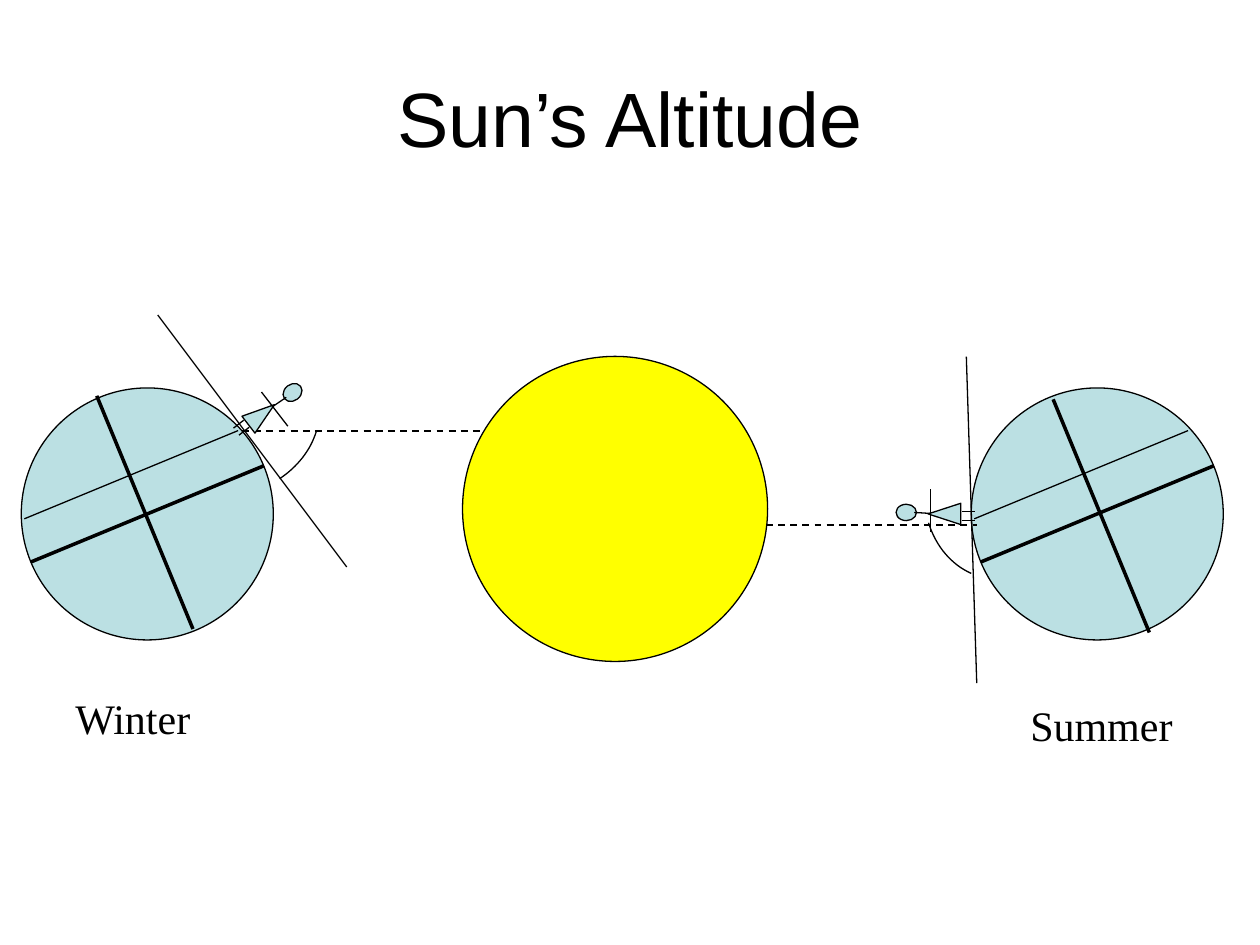
import math

import pptx
import pptx.dml.color
import pptx.enum.dml
import pptx.enum.shapes
import pptx.enum.text
import pptx.oxml
import pptx.oxml.ns
import pptx.util
from pptx.util import Cm

BLACK = pptx.dml.color.RGBColor(0x00, 0x00, 0x00)
SUN_YELLOW = pptx.dml.color.RGBColor(0xFF, 0xFF, 0x00)
PALE_BLUE = pptx.dml.color.RGBColor(0xBB, 0xE0, 0xE3)
OVAL = pptx.enum.shapes.MSO_SHAPE.OVAL
TRIANGLE = pptx.enum.shapes.MSO_SHAPE.ISOSCELES_TRIANGLE


def style_line(line, width=0.75):
    line.color.rgb = BLACK
    line.width = pptx.util.Pt(width)


def add_solid(shapes, kind, center, width, height, color, rotation=0):
    """Add a filled, outlined preset shape around its center."""
    x, y = center
    shape = shapes.add_shape(kind, Cm(x - width / 2), Cm(y - height / 2), Cm(width), Cm(height))
    shape.rotation = rotation
    shape.shadow.inherit = False
    shape.fill.solid()
    shape.fill.fore_color.rgb = color
    style_line(shape.line)


def add_line(shapes, start, end, width=0.75, dashed=False):
    points = [Cm(value) for value in (*start, *end)]
    connector = shapes.add_connector(pptx.enum.shapes.MSO_CONNECTOR.STRAIGHT, *points)
    style_line(connector.line, width)
    if dashed:
        connector.line.dash_style = pptx.enum.dml.MSO_LINE.DASH
    properties = connector._element.spPr
    properties.append(pptx.oxml.parse_xml(f'<a:effectLst {pptx.oxml.ns.nsdecls("a")}/>'))


def add_angle_arc(shapes, controls, steps=16):
    """Draw an open arc along a cubic curve with four control points."""
    points = []
    for step in range(steps + 1):
        t = step / steps
        weights = [math.comb(3, k) * t**k * (1 - t) ** (3 - k) for k in range(4)]
        points.append(tuple(
            Cm(sum(weight * control[axis] for weight, control in zip(weights, controls)))
            for axis in range(2)
        ))
    builder = shapes.build_freeform(*points[0])
    builder.add_line_segments(points[1:], close=False)
    arc = builder.convert_to_shape()
    arc.shadow.inherit = False
    arc.fill.background()
    style_line(arc.line)


def add_earth(shapes, center, axis_center):
    """Globe with equator, the observer's parallel and the tilted axis."""
    x, y = center
    group = shapes.add_group_shape().shapes
    add_solid(group, OVAL, center, 5.08, 5.08, PALE_BLUE, 337.6)
    add_line(group, (x - 2.35, y + 0.97), (x + 2.35, y - 0.97), 2)
    add_line(group, (x - 2.48, y + 0.1), (x + 1.83, y - 1.68))
    axis_x, axis_y = axis_center
    add_line(group, (axis_x + 0.97, axis_y + 2.35), (axis_x - 0.97, axis_y - 2.35), 2)


def add_observer(shapes, center, rotation):
    """Stick figure laid out upright, then turned about its body."""
    angle = math.radians(rotation)
    sine, cosine = math.sin(angle), math.cos(angle)

    def place(right, up):
        return (center[0] + right * cosine + up * sine,
                center[1] + right * sine - up * cosine)

    group = shapes.add_group_shape().shapes
    add_solid(group, OVAL, place(0.03, 0.77), 0.33, 0.41, PALE_BLUE, rotation)
    add_line(group, place(0.03, 0.61), place(0, 0.12))  # neck
    add_solid(group, TRIANGLE, center, 0.43, 0.66, PALE_BLUE, rotation)
    for leg in (-0.13, 0.05):
        add_line(group, place(leg, -0.35), place(leg, -0.61))
    add_line(group, place(-0.36, 0.28), place(0.51, 0.28))  # arms


def add_run(paragraph, text, font_name, size):
    run = paragraph.add_run()
    run.text = text
    run.font.name = font_name
    run.font.size = pptx.util.Pt(size)
    run.font.color.rgb = BLACK


def add_title(slide, text):
    title = slide.shapes.title
    title.left, title.top, title.width, title.height = Cm(1.27), Cm(0.76), Cm(22.86), Cm(3.18)
    title.text_frame.vertical_anchor = pptx.enum.text.MSO_ANCHOR.MIDDLE
    paragraph = title.text_frame.paragraphs[0]
    paragraph.alignment = pptx.enum.text.PP_ALIGN.CENTER
    add_run(paragraph, text, "Arial", 44)


def add_label(shapes, text, left, top, width):
    box = shapes.add_textbox(Cm(left), Cm(top), Cm(width), Cm(1.27))
    box.text_frame.word_wrap = False
    box.text_frame.auto_size = pptx.enum.text.MSO_AUTO_SIZE.SHAPE_TO_FIT_TEXT
    add_run(box.text_frame.paragraphs[0], text, "Times New Roman", 24)


def main():
    presentation = pptx.Presentation()
    presentation.slide_width, presentation.slide_height = Cm(25.4), Cm(19.05)
    slide = presentation.slides.add_slide(presentation.slide_layouts[5])
    shapes = slide.shapes
    add_title(slide, "Sun’s Altitude")

    # Sun between the two positions of the Earth
    add_solid(shapes, OVAL, (12.4, 10.26), 6.15, 6.15, SUN_YELLOW)
    add_earth(shapes, (2.97, 10.36), (2.92, 10.33))
    add_earth(shapes, (22.12, 10.36), (22.2, 10.4))

    # Sun rays and horizons
    add_line(shapes, (4.88, 8.69), (9.73, 8.69), 1, dashed=True)
    add_line(shapes, (15.44, 10.59), (19.69, 10.59), 1, dashed=True)
    add_line(shapes, (3.18, 6.35), (6.99, 11.43))
    add_line(shapes, (19.48, 7.19), (19.69, 13.77))

    # Altitude angles
    add_angle_arc(shapes, [(6.38, 8.69), (6.27, 9.07), (5.99, 9.42), (5.64, 9.65)])
    add_angle_arc(shapes, [(19.58, 11.56), (19.18, 11.38), (18.87, 11.02), (18.72, 10.54)])

    # Observers and season names
    add_observer(shapes, (5.27, 8.36), 52.3)
    add_observer(shapes, (19.04, 10.36), 270)
    add_label(shapes, "Winter", 1.27, 13.84, 2.84)
    add_label(shapes, "Summer", 20.52, 13.97, 3.38)

    presentation.save("out.pptx")


if __name__ == "__main__":
    main()
